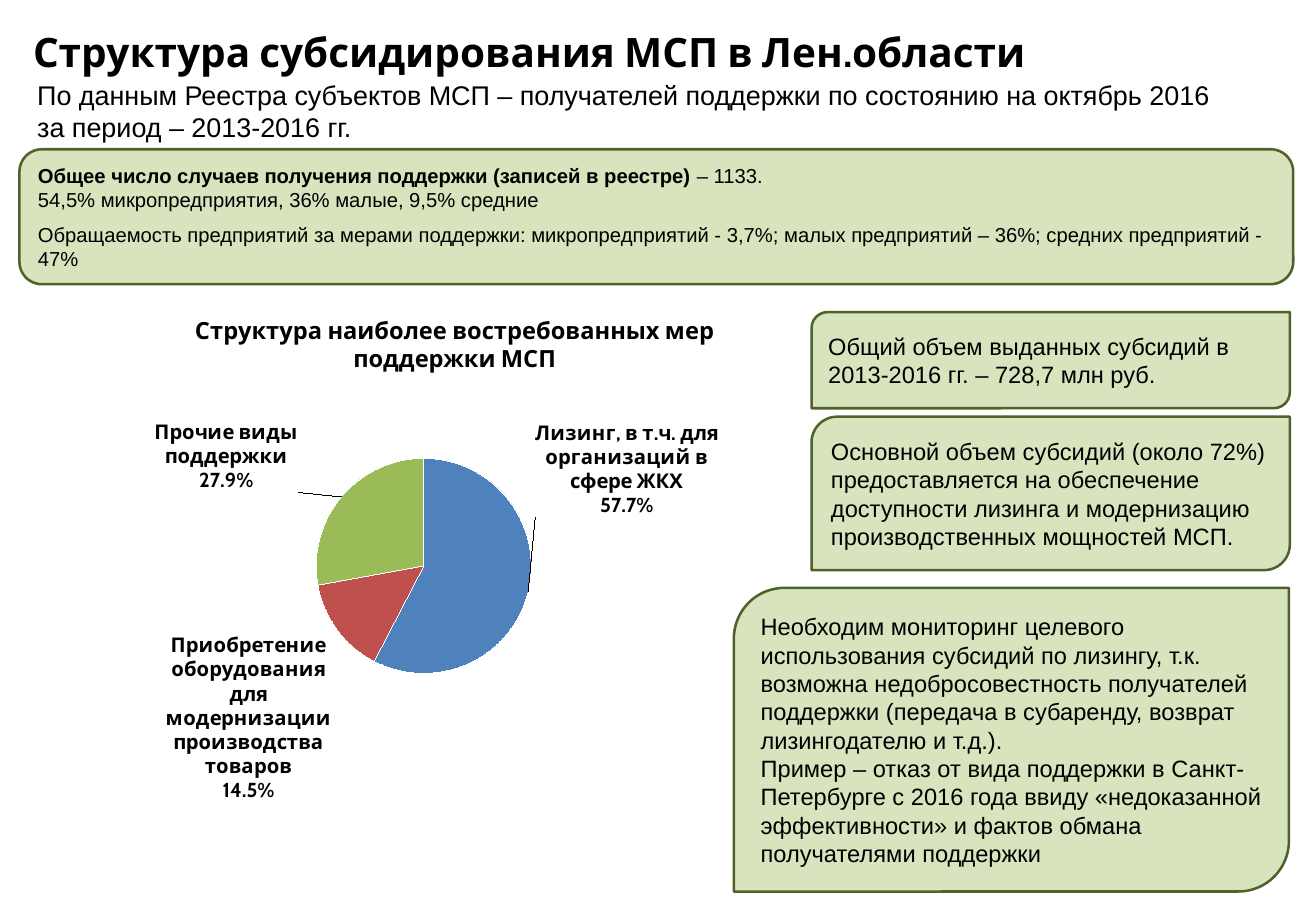
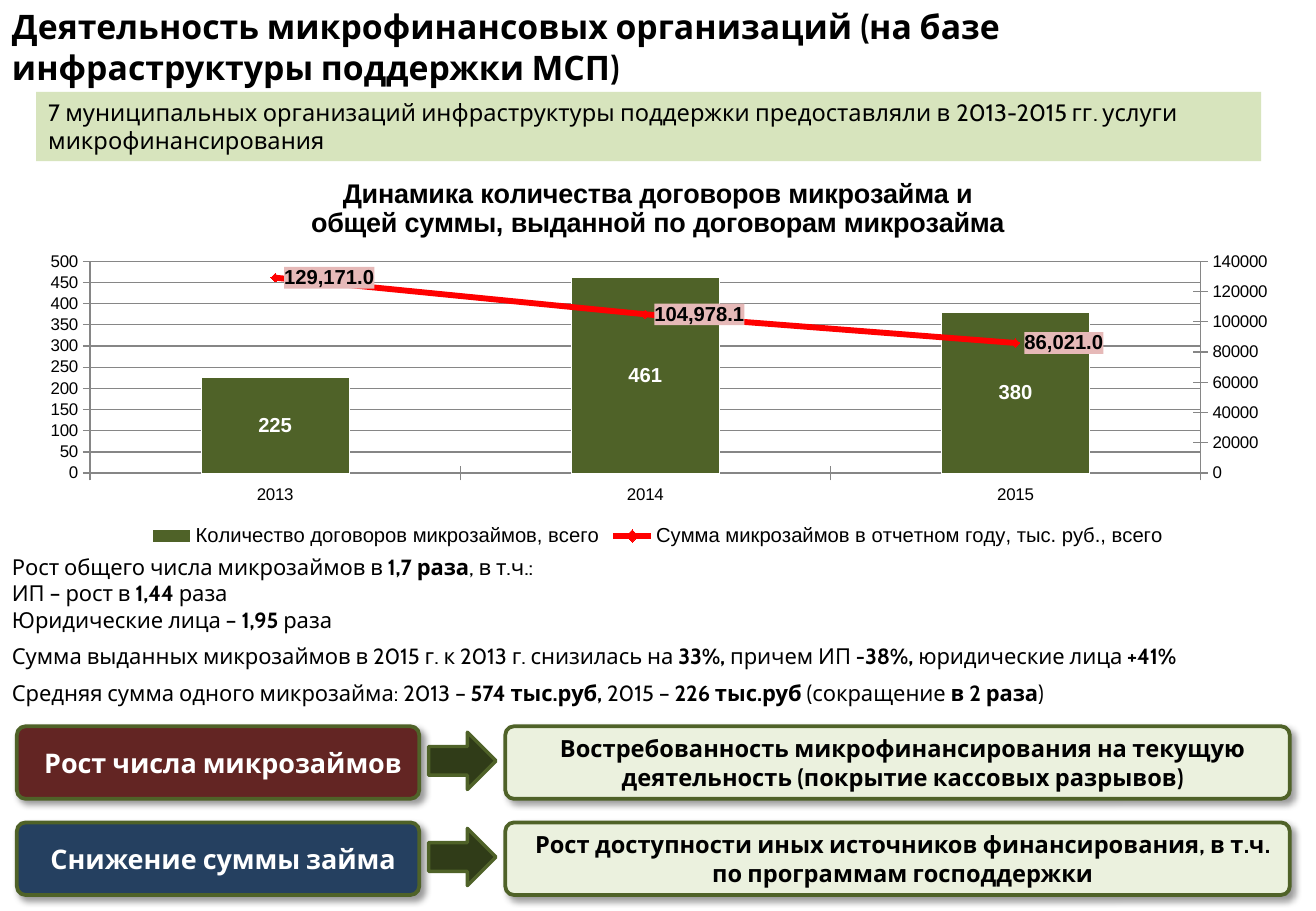
from copy import deepcopy

from pptx import Presentation
from pptx.chart.data import CategoryChartData
from pptx.dml.color import RGBColor
from pptx.enum.chart import (XL_CHART_TYPE, XL_LABEL_POSITION, XL_LEGEND_POSITION,
                             XL_MARKER_STYLE, XL_TICK_MARK)
from pptx.enum.shapes import MSO_SHAPE
from pptx.enum.text import MSO_ANCHOR, PP_ALIGN
from pptx.oxml import parse_xml
from pptx.oxml.ns import nsdecls
from pptx.util import Pt

RECT, ROUND = MSO_SHAPE.RECTANGLE, MSO_SHAPE.ROUNDED_RECTANGLE
DIAG, ARROW = MSO_SHAPE.ROUND_2_DIAG_RECTANGLE, MSO_SHAPE.RIGHT_ARROW
TOP, MID = MSO_ANCHOR.TOP, MSO_ANCHOR.MIDDLE
LEFT, MIDST = PP_ALIGN.LEFT, PP_ALIGN.CENTER
PIE, COLUMN = XL_CHART_TYPE.PIE, XL_CHART_TYPE.COLUMN_CLUSTERED
OUTER, INNER, ASIDE = (XL_LABEL_POSITION.OUTSIDE_END, XL_LABEL_POSITION.CENTER,
                       XL_LABEL_POSITION.RIGHT)
BOTTOM, CROSS, GEM = XL_LEGEND_POSITION.BOTTOM, XL_TICK_MARK.CROSS, XL_MARKER_STYLE.DIAMOND


class Theme:
    plain, head = "Arial", "Cabin"
    black, white, grey, red = "000000", "FFFFFF", "868686", "FF0000"
    green, pale, mist, dark = "4F6228", "D7E4BD", "EBF1DE", "303C18"
    wine, navy, rose = "632523", "254060", "E6B9B8"
    pie = ("4F81BD", "C0504D", "9BBB59")
    title, big, body, note, small, tick = 24, 16, 14, 13, 12, 10


def put(font, size, name=None, ink=Theme.black, bold=False):
    """Apply type values to any font."""
    for key, val in {"size": Pt(size), "name": name, "bold": bold}.items():
        setattr(font, key, val)
    font.color.rgb = RGBColor.from_string(ink)


def box(slide, area, text="", size=14, name=Theme.plain, ink=Theme.black, bold=False,
        kind=None, fill=None, edge=None, width=1.5, anchor=TOP, align=LEFT,
        gaps=(), inset=7.2):
    """Add a text box or shape; text has a paragraph a line, *bold* between stars."""
    area = [Pt(val) for val in area]
    if kind is None:
        shape = slide.shapes.add_textbox(*area)
    else:
        shape = slide.shapes.add_shape(kind, *area)
        shape.shadow.inherit = False
        shape.fill.solid()
        shape.fill.fore_color.rgb = RGBColor.from_string(fill)
        if edge:
            shape.line.color.rgb = RGBColor.from_string(edge)
            shape.line.width = Pt(width)
        else:
            shape.line.fill.background()
    frame = shape.text_frame
    form = {"word_wrap": True, "vertical_anchor": anchor, "margin_left": Pt(inset)}
    for key, val in form.items():
        setattr(frame, key, val)
    for num, line in enumerate(text.split("\n") if text else []):
        para = frame.add_paragraph() if num else frame.paragraphs[0]
        para.alignment = align
        para.space_after = Pt(gaps[num] if num < len(gaps) else 0)
        for part, words in enumerate(line.split("*")):
            if words:
                run = para.add_run()
                run.text = words
                put(run.font, size, name, ink, bold or part % 2 == 1)
    return shape


deck = Presentation()
deck.slide_width, deck.slide_height = Pt(780), Pt(540)
blank = deck.slide_layouts[6]
heading = {"name": Theme.head, "bold": True}
panel = {"fill": Theme.pale, "edge": Theme.green, "anchor": MID}

# Slide 1: heading and summary
first = deck.slides.add_slide(blank)
box(first, (12.5, 11.5, 755, 37.5), "Структура субсидирования МСП в Лен.области",
    Theme.title, anchor=MID, **heading)
box(first, (15, 43, 765, 46),
    "По данным Реестра субъектов МСП – получателей поддержки по состоянию на октябрь 2016\n"
    "за период – 2013-2016 гг.", Theme.big)
box(first, (103.5, 183.5, 332, 41), "Структура наиболее востребованных мер поддержки МСП",
    Theme.body, kind=RECT, fill=Theme.white, align=MIDST, **heading)
box(first, (11.5, 88.5, 755, 80),
    "*Общее число случаев получения поддержки (записей в реестре) *– 1133.\n"
    "54,5% микропредприятия, 36% малые, 9,5% средние\n"
    "Обращаемость предприятий за мерами поддержки: микропредприятий - 3,7%; "
    "малых предприятий – 36%; средних предприятий - 47%",
    Theme.small, kind=ROUND, gaps=(0, 6, 6), **panel)

# Slide 1: findings
facts = [
    ((435, 348.5, 329, 180),
     "Необходим мониторинг целевого использования субсидий по лизингу, т.к. возможна "
     "недобросовестность получателей поддержки (передача в субаренду, возврат "
     "лизингодателю и т.д.).\n"
     "Пример – отказ от вида поддержки в Санкт-Петербурге с 2016 года ввиду "
     "«недоказанной эффективности» и фактов обмана получателями поддержки"),
    ((481, 247, 283.5, 91),
     "Основной объем субсидий (около 72%) предоставляется на обеспечение доступности "
     "лизинга и модернизацию производственных мощностей МСП."),
    ((481, 185, 283.5, 57),
     "Общий объем выданных субсидий в 2013-2016 гг. – 728,7 млн руб."),
]
for area, text in facts:
    box(first, area, text, Theme.body, kind=DIAG, **panel)

# Slide 1: pie chart
data = CategoryChartData()
data.categories = ["Лизинг, в т.ч. для организаций в сфере ЖКХ",
                   "Приобретение оборудования для модернизации производства товаров",
                   "Прочие виды поддержки"]
data.add_series("Поддержка", (57.7, 14.5, 27.9))
pie = first.shapes.add_chart(PIE, Pt(-24), Pt(236), Pt(556), Pt(255), data).chart
pie.has_title = pie.has_legend = False
put(pie.font, Theme.tick, Theme.head)
pie.plots[0].vary_by_categories = False
share = pie.plots[0].series[0]
for num, tint in enumerate(Theme.pie):
    look = share.points[num].format
    look.fill.solid()
    look.fill.fore_color.rgb = RGBColor.from_string(tint)
    look.line.color.rgb = RGBColor.from_string(Theme.white)
form = {"show_value": True, "show_category_name": True, "number_format": '0.0"%"',
        "number_format_is_linked": False, "position": OUTER}
for key, val in form.items():
    setattr(share.data_labels, key, val)
put(share.data_labels.font, Theme.small, Theme.head, bold=True)

# Label line breaks, and the two labels that are moved by a share of the chart
tags = pie.element.xpath("//c:ser/c:dLbls")[0]
tags.xpath("c:showBubbleSize")[0].addnext(
    parse_xml(f'<c:separator {nsdecls("c")}>\n</c:separator>'))
common = [kid for kid in tags if not kid.tag.endswith("showLeaderLines")]
for spot, (num, left, down) in enumerate([(0, 0, -0.4), (2, -0.04, 0)]):
    tag = parse_xml(
        f'<c:dLbl {nsdecls("c")}><c:idx val="{num}"/><c:layout><c:manualLayout>'
        f'<c:x val="{left}"/><c:y val="{down}"/></c:manualLayout></c:layout></c:dLbl>')
    for kid in common:
        tag.append(deepcopy(kid))
    tags.insert(spot, tag)

# Slide 2: heading, strip and notes
second = deck.slides.add_slide(blank)
box(second, (0, 0, 780, 37.5),
    "Деятельность микрофинансовых организаций (на базе инфраструктуры поддержки МСП)",
    20, **heading)
box(second, (21.5, 54.5, 726, 41),
    "7 муниципальных организаций инфраструктуры поддержки предоставляли в 2013-2015 гг. "
    "услуги микрофинансирования", Theme.body, Theme.head, kind=RECT, fill=Theme.pale)
box(second, (0, 324.5, 780, 98),
    "Рост общего числа микрозаймов в *1,7 раза*, в т.ч.:\n"
    "ИП – рост в *1,44* раза\n"
    "Юридические лица – *1,95* раза\n"
    "Сумма выданных микрозаймов в 2015 г. к 2013 г. снизилась на *33%, *причем ИП "
    "*-38%, *юридические лица *+41%*\n"
    "Средняя сумма одного микрозайма: 2013 – *574 тыс.руб, *2015 – *226 тыс.руб *"
    "(сокращение *в 2 раза*)", Theme.note, Theme.head, gaps=(0, 0, 6, 6))

# Slide 2: columns
data = CategoryChartData()
data.categories = ["2013", "2014", "2015"]
data.add_series("Количество договоров микрозаймов, всего", (225, 461, 380))
data.add_series("Сумма микрозаймов в отчетном году, тыс. руб., всего",
                (129171, 104978.1, 86021))
loans = second.shapes.add_chart(COLUMN, Pt(16), Pt(94.5), Pt(748), Pt(232.5), data).chart
put(loans.font, Theme.tick, Theme.plain)
loans.has_title = loans.has_legend = True
title = loans.chart_title.text_frame
title.text = ("Динамика количества договоров микрозайма и\n"
              "общей суммы, выданной по договорам микрозайма")
for para in title.paragraphs:
    put(para.runs[0].font, Theme.big, Theme.plain, bold=True)
loans.legend.position, loans.legend.include_in_layout = BOTTOM, False
put(loans.legend.font, Theme.small, Theme.plain)
scale = loans.value_axis
form = {"minimum_scale": 0, "maximum_scale": 500, "major_unit": 50,
        "has_major_gridlines": True}
for key, val in form.items():
    setattr(scale, key, val)
for axis in (scale, loans.category_axis):
    axis.major_tick_mark = CROSS
    axis.format.line.color.rgb = RGBColor.from_string(Theme.grey)
scale.major_gridlines.format.line.color.rgb = RGBColor.from_string(Theme.grey)

# Slide 2: the second series becomes a line on a right axis
plot = loans.element.xpath("//c:plotArea")[0]
bars = plot.xpath("c:barChart")[0]
curve = parse_xml(
    f'<c:lineChart {nsdecls("c")}><c:grouping val="standard"/><c:varyColors val="0"/>'
    '<c:marker val="1"/><c:axId val="501"/><c:axId val="502"/></c:lineChart>')
ser = bars.xpath("c:ser")[1]
for kid in ser.xpath("c:invertIfNegative"):
    ser.remove(kid)
curve.insert(2, ser)
bars.addnext(curve)
cat, val = plot.xpath("c:catAx")[0], plot.xpath("c:valAx")[0]
right, under = deepcopy(val), deepcopy(cat)
val.addnext(right)
right.addnext(under)
for kid in right.xpath("c:majorGridlines"):
    right.remove(kid)
edits = [(right, {"c:axId": 502, "c:crossAx": 501, "c:axPos": "r", "c:crosses": "max",
                  "c:scaling/c:max": 140000, "c:majorUnit": 20000}),
         (under, {"c:axId": 501, "c:crossAx": 502, "c:delete": 1})]
for axis, vals in edits:
    for key, val in vals.items():
        axis.xpath(key)[0].set("val", str(val))

# Slide 2: series looks
column, line = loans.plots[0].series[0], loans.plots[1].series[0]
loans.plots[0].gap_width = 150
loans.plots[0].vary_by_categories = False
line.smooth = False
line.format.line.color.rgb = RGBColor.from_string(Theme.red)
line.format.line.width = Pt(3.5)
line.marker.style, line.marker.size = GEM, 5
for look, tint, edge in [(column.format, Theme.green, Theme.white),
                         (line.marker.format, Theme.red, Theme.red)]:
    look.fill.solid()
    look.fill.fore_color.rgb = RGBColor.from_string(tint)
    look.line.color.rgb = RGBColor.from_string(edge)
for item, place, code, ink in [(column, INNER, "General", Theme.white),
                               (line, ASIDE, "#,##0.0", Theme.black)]:
    form = {"show_value": True, "position": place, "number_format": code,
            "number_format_is_linked": False}
    for key, val in form.items():
        setattr(item.data_labels, key, val)
    put(item.data_labels.font, Theme.small, Theme.plain, ink, True)
curve.xpath("c:ser/c:dLbls/c:txPr")[0].addprevious(parse_xml(
    f'<c:spPr {nsdecls("c", "a")}><a:solidFill><a:srgbClr val="{Theme.rose}"/>'
    '</a:solidFill></c:spPr>'))

# Plot areas of both charts, as shares of the chart
for chart, area in [(pie, (0.38, 0.14, 0.23, 0.5)), (loans, (0.05, 0.26, 0.88, 0.54))]:
    plot = chart.element.xpath("//c:plotArea")[0]
    for kid in plot.xpath("c:layout"):
        plot.remove(kid)
    sizes = "".join(f'<c:{key} val="{val}"/>' for key, val in zip("xywh", area))
    plot.insert(0, parse_xml(
        f'<c:layout {nsdecls("c")}><c:manualLayout><c:layoutTarget val="inner"/>'
        '<c:xMode val="edge"/><c:yMode val="edge"/>'
        f'{sizes}</c:manualLayout></c:layout>'))

# Slide 2: cause, arrow, effect
rows = [
    (Theme.wine, "Рост числа микрозаймов",
     "Востребованность микрофинансирования на текущую деятельность "
     "(покрытие кассовых разрывов)"),
    (Theme.navy, "Снижение суммы займа",
     "Рост доступности иных источников финансирования, в т.ч. по программам господдержки"),
]
for num, (tint, cause, effect) in enumerate(rows):
    top = 430.5 + 57 * num
    for left, wide, text, size, ink, fill in [
            (10, 238.5, cause, Theme.big, Theme.white, tint),
            (299.5, 465, effect, Theme.body, Theme.black, Theme.mist)]:
        card = box(second, (left, top, wide, 43), text, size, ink=ink, kind=ROUND, fill=fill,
                   edge=Theme.green, width=2.25, anchor=MID, align=MIDST, inset=13.2,
                   **heading)
        card.adjustments[0] = 0.12
        card.element.spPr.xpath("a:effectLst")[0].append(parse_xml(
            f'<a:outerShdw {nsdecls("a")} blurRad="{Pt(4)}" dist="{Pt(3)}" dir="2700000">'
            f'<a:srgbClr val="{Theme.black}"><a:alpha val="40000"/></a:srgbClr>'
            '</a:outerShdw>'))
    box(second, (254, top + 3.5, 40, 34), kind=ARROW, fill=Theme.dark, edge=Theme.green, width=2)

deck.save("out.pptx")
